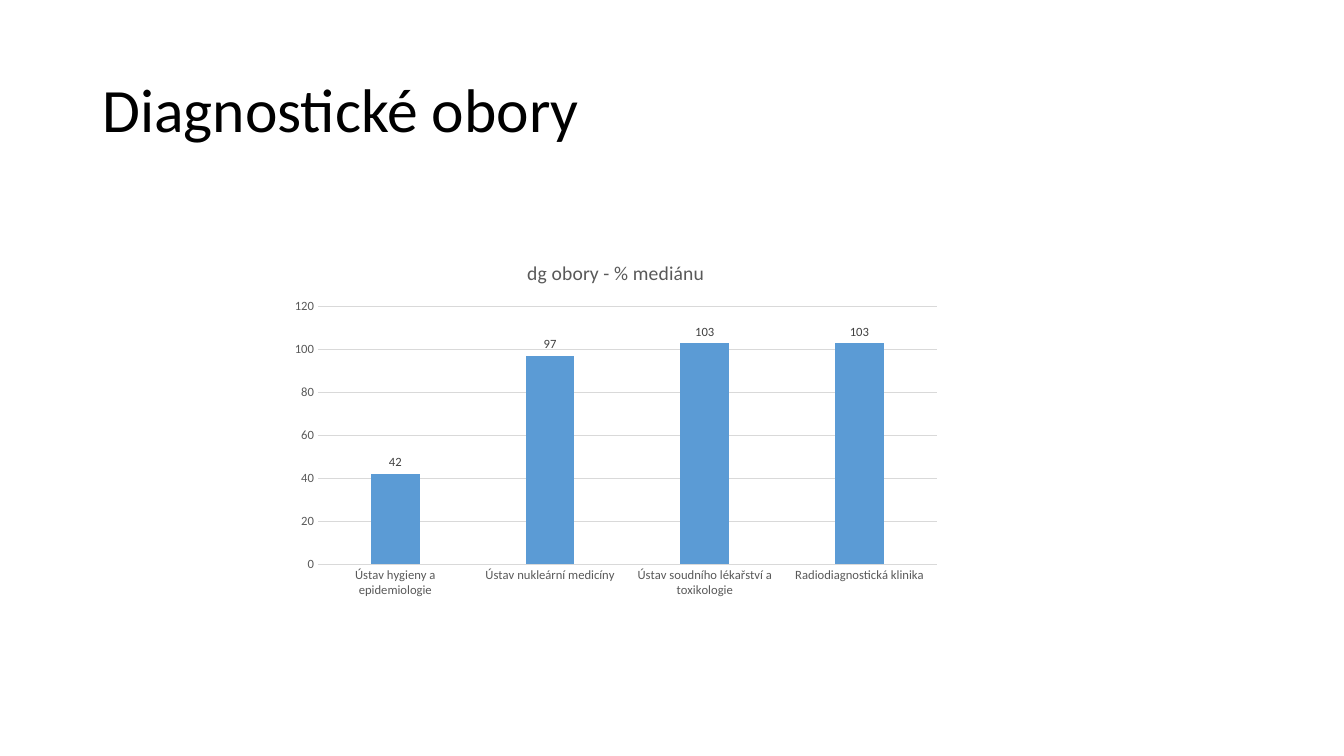
from dataclasses import dataclass

from pptx import Presentation
from pptx.chart.data import CategoryChartData
from pptx.dml.color import RGBColor
from pptx.enum.chart import XL_CHART_TYPE, XL_LABEL_POSITION, XL_TICK_MARK
from pptx.enum.text import MSO_ANCHOR
from pptx.util import Emu, Pt

COLUMN = XL_CHART_TYPE.COLUMN_CLUSTERED
OUTSIDE = XL_LABEL_POSITION.OUTSIDE_END
NO_TICK = XL_TICK_MARK.NONE
MIDDLE = MSO_ANCHOR.MIDDLE
SCALE = 9525
FORMAT = "#,##0"
MEDIANS = {
    "Ústav hygieny a epidemiologie": 42,
    "Ústav nukleární medicíny": 97,
    "Ústav soudního lékařství a toxikologie": 103,
    "Radiodiagnostická klinika": 103,
}


@dataclass(frozen=True)
class Theme:
    font: str = "Calibri"
    ink: str = "000000"
    gray: str = "595959"
    dark: str = "404040"
    rule: str = "D9D9D9"
    bar: str = "5B9BD5"
    head: int = 44
    title: int = 14
    base: int = 10
    small: int = 9


THEME = Theme()


def px(*sizes):
    """Turn pixel lengths into EMU."""
    return [Emu(size * SCALE) for size in sizes]


def style(font, size, color):
    """Set face, size and colour of a font."""
    font.name = THEME.font
    font.size = Pt(size)
    font.bold = False
    font.color.rgb = RGBColor.from_string(color)


def rule(line):
    """Draw a thin light line."""
    line.color.rgb = RGBColor.from_string(THEME.rule)
    line.width = Pt(0.75)


def add_head(slide, text, box):
    """Add the slide heading."""
    frame = slide.shapes.add_textbox(*px(*box)).text_frame
    frame.word_wrap = True
    frame.vertical_anchor = MIDDLE
    para = frame.paragraphs[0]
    para.line_spacing = 0.9
    run = para.add_run()
    run.text = text
    style(run.font, THEME.head, THEME.ink)


def set_axes(chart):
    """Style both axes and the gridlines."""
    for axis in (chart.category_axis, chart.value_axis):
        axis.major_tick_mark = axis.minor_tick_mark = NO_TICK
        style(axis.tick_labels.font, THEME.small, THEME.gray)
    rule(chart.category_axis.format.line)
    value = chart.value_axis
    value.format.line.fill.background()
    value.minimum_scale, value.maximum_scale, value.major_unit = 0, 120, 20
    value.has_major_gridlines = True
    rule(value.major_gridlines.format.line)
    value.tick_labels.number_format = FORMAT
    value.tick_labels.number_format_is_linked = False


def set_bars(plot):
    """Style the columns and their labels."""
    plot.gap_width, plot.overlap = 219, -27
    plot.vary_by_categories = False
    fill = plot.series[0].format.fill
    fill.solid()
    fill.fore_color.rgb = RGBColor.from_string(THEME.bar)
    labels = plot.series[0].data_labels
    labels.show_value = True
    labels.position = OUTSIDE
    labels.number_format = FORMAT
    labels.number_format_is_linked = False
    style(labels.font, THEME.small, THEME.dark)


def add_bars(slide, title, values, box):
    """Add a titled column chart."""
    data = CategoryChartData(number_format=FORMAT)
    data.categories = list(values)
    data.add_series("Series 1", list(values.values()))
    chart = slide.shapes.add_chart(COLUMN, *px(*box), data).chart
    style(chart.font, THEME.base, THEME.ink)
    chart.has_legend = False
    chart.has_title = True
    run = chart.chart_title.text_frame.paragraphs[0].add_run()
    run.text = title
    style(run.font, THEME.title, THEME.gray)
    chart.chart_title.include_in_layout = False
    set_axes(chart)
    set_bars(chart.plots[0])


def main():
    """Build and save the slide."""
    deck = Presentation()
    deck.slide_width, deck.slide_height = px(1280, 720)
    slide = deck.slides.add_slide(deck.slide_layouts[6])
    add_head(slide, "Diagnostické obory", (88, 38, 1104, 139))
    add_bars(slide, "dg obory - % mediánu", MEDIANS, (268, 232, 637, 344))
    deck.save("out.pptx")


if __name__ == "__main__":
    main()
